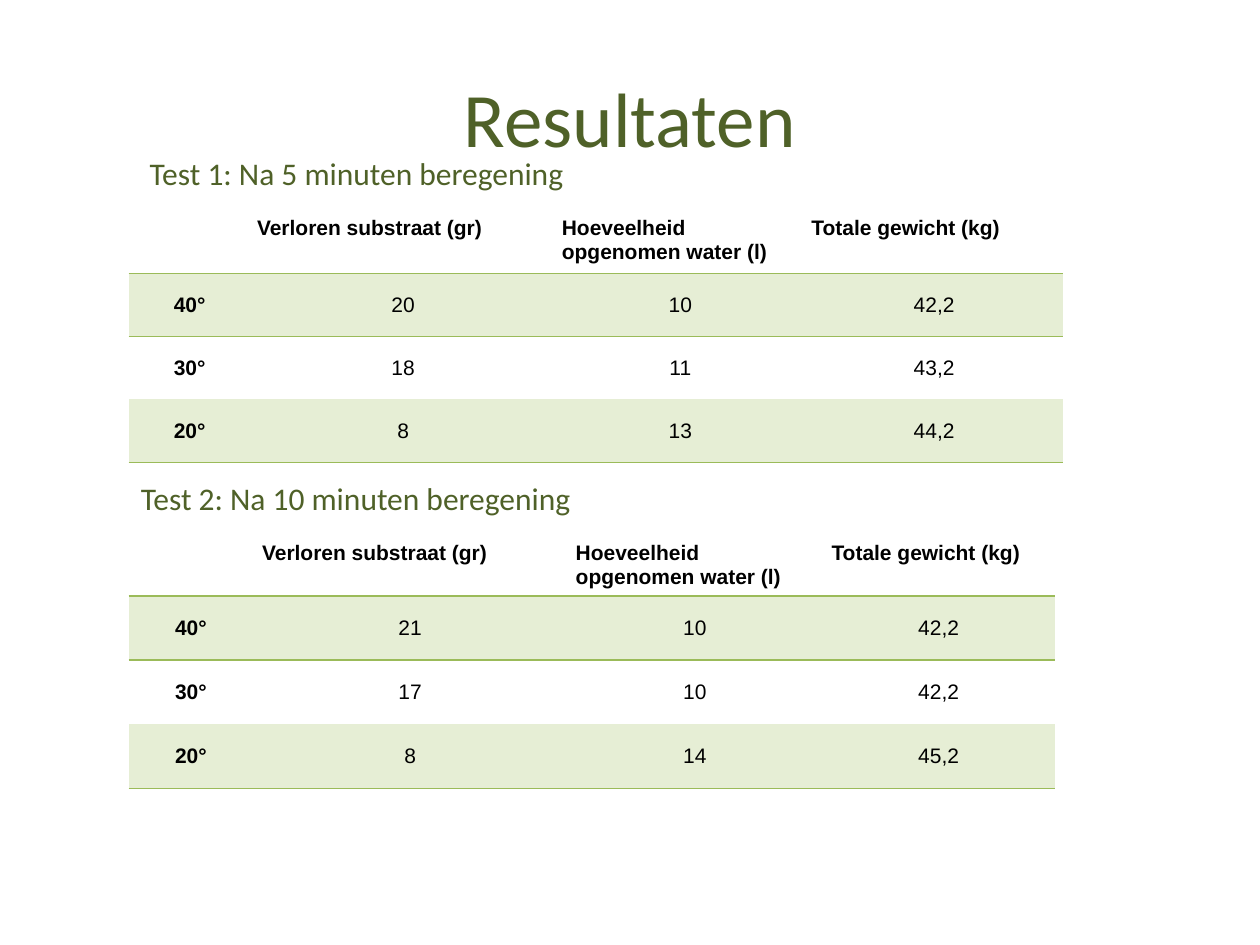
from lxml import etree
from pptx import Presentation
from pptx.dml.color import RGBColor
from pptx.enum.text import MSO_ANCHOR, PP_ALIGN
from pptx.oxml.ns import qn
from pptx.util import Inches, Pt

LEFT, CENTER = PP_ALIGN.LEFT, PP_ALIGN.CENTER
TOP, MIDDLE = MSO_ANCHOR.TOP, MSO_ANCHOR.MIDDLE
COLORS = {"heading": "4F6128", "text": "000000", "band": "E6EED5", "rule": "9BBB59"}
NO_GRID_STYLE = "{2D5ABB26-0587-4C30-8999-92F81FD0307C}"

# Content
TITLE = "Resultaten"
HEADER = ["", "Verloren substraat (gr)", "Hoeveelheid opgenomen water (l)",
          "Totale gewicht (kg)"]
TESTS = [
    {
        "caption": "Test 1: Na 5 minuten beregening",
        "caption_box": (1.09, 1.17, 3.53, 0.4),
        "origin": (1.02, 1.72),
        "columns": [0.97, 2.42, 1.98, 2.05],
        "row_heights": [0.45, 0.5, 0.5, 0.5],
        "inset": 0.05,
        "results": [["40°", "20", "10", "42,2"],
                    ["30°", "18", "11", "43,2"],
                    ["20°", "8", "13", "44,2"]],
    },
    {
        "caption": "Test 2: Na 10 minuten beregening",
        "caption_box": (1.02, 3.75, 3.66, 0.4),
        "origin": (1.02, 4.3),
        "columns": [0.99, 2.49, 2.03, 1.84],
        "row_heights": [0.43, 0.51, 0.51, 0.51],
        "inset": 0.07,
        "results": [["40°", "21", "10", "42,2"],
                    ["30°", "17", "10", "42,2"],
                    ["20°", "8", "14", "45,2"]],
    },
]


def write(frame, text, size=12, font="Arial", color="text", bold=False, align=LEFT):
    paragraph = frame.paragraphs[0]
    paragraph.alignment = align
    paragraph.font.size = Pt(size)
    run = paragraph.add_run()
    run.text = text
    run.font.size = Pt(size)
    run.font.name = font
    run.font.bold = bold
    run.font.color.rgb = RGBColor.from_string(COLORS[color])


def add_heading(slide, box, text, anchor=TOP, wrap=False, **text_format):
    frame = slide.shapes.add_textbox(*map(Inches, box)).text_frame
    frame.word_wrap = wrap
    frame.vertical_anchor = anchor
    write(frame, text, font="Calibri", color="heading", **text_format)


def add_rule(cell, side):
    line = etree.SubElement(cell._tc.get_or_add_tcPr(), qn(f"a:{side}"), w=str(Pt(1)))
    fill = etree.SubElement(line, qn("a:solidFill"))
    etree.SubElement(fill, qn("a:srgbClr"), val=COLORS["rule"])


def add_results(slide, test):
    rows = [HEADER] + test["results"]
    columns, heights = test["columns"], test["row_heights"]
    table = slide.shapes.add_table(
        len(rows), len(columns), *map(Inches, test["origin"]),
        Inches(sum(columns)), Inches(sum(heights))).table
    table._tbl.tblPr.find(qn("a:tableStyleId")).text = NO_GRID_STYLE
    for column, width in zip(table.columns, columns):
        column.width = Inches(width)
    for r, (values, height) in enumerate(zip(rows, heights)):
        table.rows[r].height = Inches(height)
        for c, value in enumerate(values):
            cell = table.cell(r, c)
            cell.margin_left = cell.margin_right = Inches(test["inset"])
            cell.margin_top = cell.margin_bottom = 0
            cell.vertical_anchor = MIDDLE if r else TOP
            # Rules under the header and under the last row
            if r == 1:
                add_rule(cell, "lnT")
            if r == len(rows) - 1:
                add_rule(cell, "lnB")
            # Odd rows are banded
            if r % 2:
                cell.fill.solid()
                cell.fill.fore_color.rgb = RGBColor.from_string(COLORS["band"])
            else:
                cell.fill.background()
            if value:
                write(cell.text_frame, value, bold=r == 0 or c == 0,
                      align=CENTER if r else LEFT)


def main():
    prs = Presentation()
    prs.slide_width, prs.slide_height = Inches(10), Inches(7.5)
    slide = prs.slides.add_slide(prs.slide_layouts[6])

    # Title
    add_heading(slide, (0.5, 0.3, 9, 1.25), TITLE, anchor=MIDDLE, wrap=True,
                size=44, align=CENTER)

    # Caption and table for each test
    for test in TESTS:
        add_results(slide, test)
        add_heading(slide, test["caption_box"], test["caption"], size=18)

    prs.save("out.pptx")


if __name__ == "__main__":
    main()
